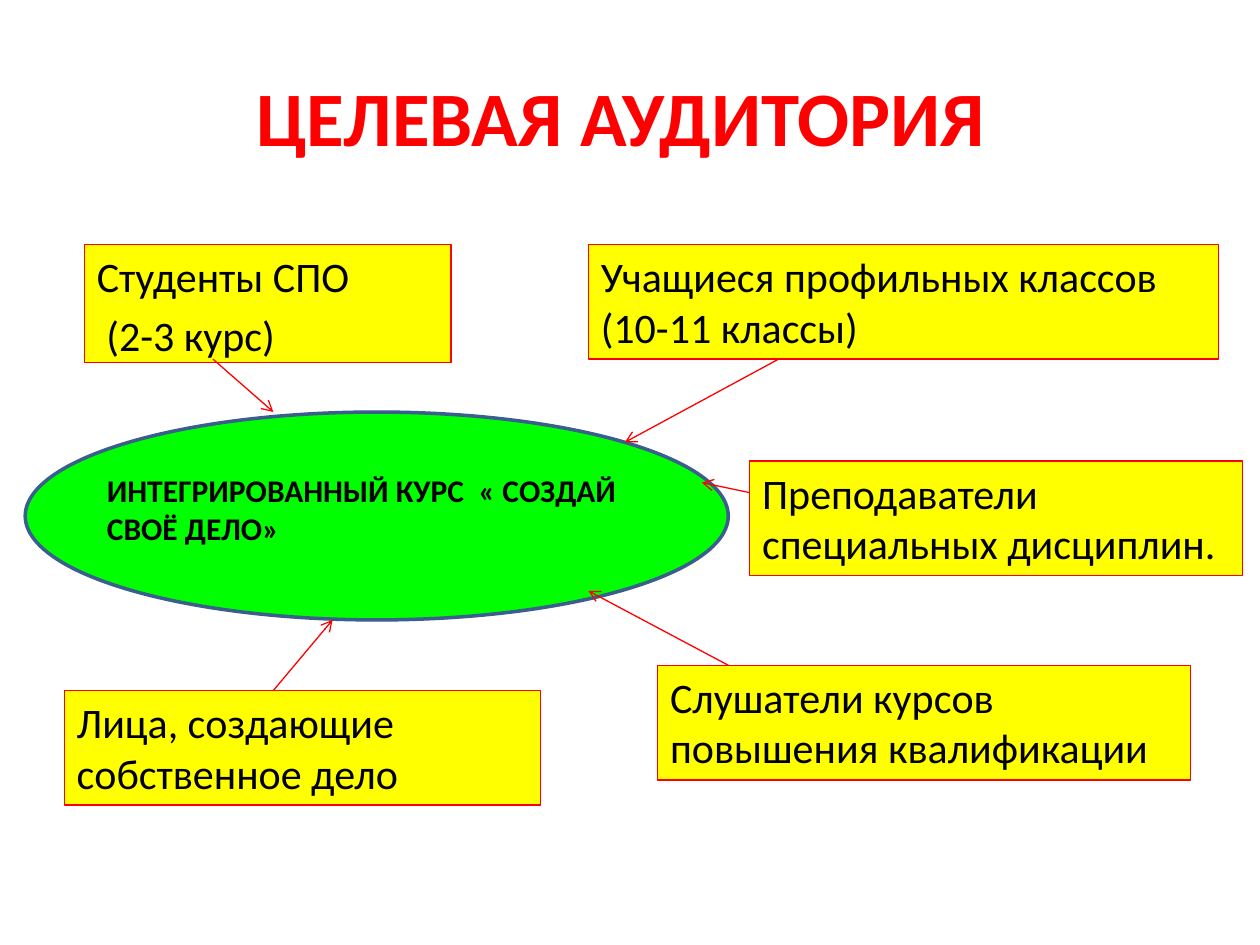
from dataclasses import dataclass

from lxml import etree
from pptx import Presentation
from pptx import util as u
from pptx.dml.color import RGBColor
from pptx.enum import shapes, text
from pptx.oxml import ns


@dataclass
class Theme:
    font: str = "Calibri"
    red: str = "FF0000"
    yellow: str = "FFFF00"
    green: str = "00FF00"
    blue: str = "3A5F8C"
    black: str = "000000"
    head: int = 44
    body: int = 24
    core: int = 18
    thin: float = 0.75
    thick: float = 2


def assign(item, **values):
    for key, value in values.items():
        setattr(item, key, value)


class Board:
    """Holds the style and the current slide."""

    def __init__(self, deck, theme):
        self.theme = theme
        self.slide = deck.slides.add_slide(deck.slide_layouts[5])
        self.shapes = self.slide.shapes

    def fill_text(self, frame, lines, size, color, bold=False, gap=0,
                  align=text.PP_ALIGN.LEFT, **form):
        assign(frame, **{"word_wrap": True,
                         "vertical_anchor": text.MSO_ANCHOR.TOP, **form})
        frame.text = "\n".join(lines)
        for para in frame.paragraphs:
            assign(para, alignment=align, space_before=u.Pt(gap))
            for run in para.runs:
                assign(run.font, name=self.theme.font, size=u.Pt(size), bold=bold)
                run.font.color.rgb = RGBColor.from_string(color)

    def title(self, area, words):
        item = self.shapes.title
        places = map(u.Inches, area)
        assign(item, **dict(zip(("left", "top", "width", "height"), places)))
        self.fill_text(item.text_frame, [words], self.theme.head, self.theme.red,
                       bold=True, align=text.PP_ALIGN.CENTER,
                       vertical_anchor=text.MSO_ANCHOR.MIDDLE)

    def shape(self, kind, area, fill, edge, width):
        item = self.shapes.add_shape(kind, *map(u.Inches, area))
        item.shadow.inherit = False
        item.fill.solid()
        item.fill.fore_color.rgb = RGBColor.from_string(fill)
        item.line.color.rgb = RGBColor.from_string(edge)
        item.line.width = u.Pt(width)
        return item

    def box(self, area, lines, gap=0, wrap=True):
        look = self.theme
        item = self.shape(shapes.MSO_SHAPE.RECTANGLE, area,
                          look.yellow, look.red, look.thin)
        self.fill_text(item.text_frame, lines, look.body, look.black,
                       gap=gap, word_wrap=wrap)

    def oval(self, area):
        look = self.theme
        self.shape(shapes.MSO_SHAPE.OVAL, area, look.green, look.blue, look.thick)

    def label(self, area, words):
        item = self.shapes.add_textbox(*map(u.Inches, area))
        self.fill_text(item.text_frame, [words], self.theme.core,
                       self.theme.black, bold=True)

    def arrow(self, start, end):
        item = self.shapes.add_connector(shapes.MSO_CONNECTOR.STRAIGHT,
                                         *map(u.Inches, start + end))
        item.line.color.rgb = RGBColor.from_string(self.theme.red)
        item.line.width = u.Pt(self.theme.thin)
        props = item._element.spPr
        etree.SubElement(props.get_or_add_ln(), ns.qn("a:tailEnd"), type="arrow")
        etree.SubElement(props, ns.qn("a:effectLst"))


def main():
    deck = Presentation()
    assign(deck, slide_width=u.Inches(10), slide_height=u.Inches(7.5))
    board = Board(deck, Theme())

    # Title
    board.title((0.43, 0.29, 9, 1.25), "ЦЕЛЕВАЯ АУДИТОРИЯ")

    # Audience groups
    tall = 0.91
    board.box((0.67, 1.94, 2.91, 0.94), ["Студенты СПО", " (2-3 курс)"], gap=4.8)
    board.box((4.67, 1.94, 5, tall), ["Учащиеся профильных классов (10-11 классы)"])
    board.box((0.51, 5.48, 3.78, tall), ["Лица, создающие собственное дело"])
    board.box((5.22, 5.28, 4.23, tall), ["Слушатели курсов повышения квалификации"])

    # Course in the centre, with the teachers beside it
    board.oval((0.2, 3.27, 5.58, 1.65))
    board.box((5.95, 3.66, 3.91, tall),
              ["Преподаватели", "специальных дисциплин."], wrap=False)
    board.label((0.75, 3.69, 4.65, 0.71),
                "ИНТЕГРИРОВАННЫЙ КУРС  « СОЗДАЙ СВОЁ ДЕЛО»")

    # Arrows from each group to the course
    for start, end in (
        ((1.69, 2.85), (2.17, 3.27)),
        ((6.18, 2.85), (4.96, 3.51)),
        ((2.17, 5.48), (2.64, 4.92)),
        ((5.78, 5.28), (4.67, 4.69)),
        ((5.95, 3.91), (5.57, 3.83)),
    ):
        board.arrow(start, end)

    deck.save("out.pptx")


if __name__ == "__main__":
    main()
